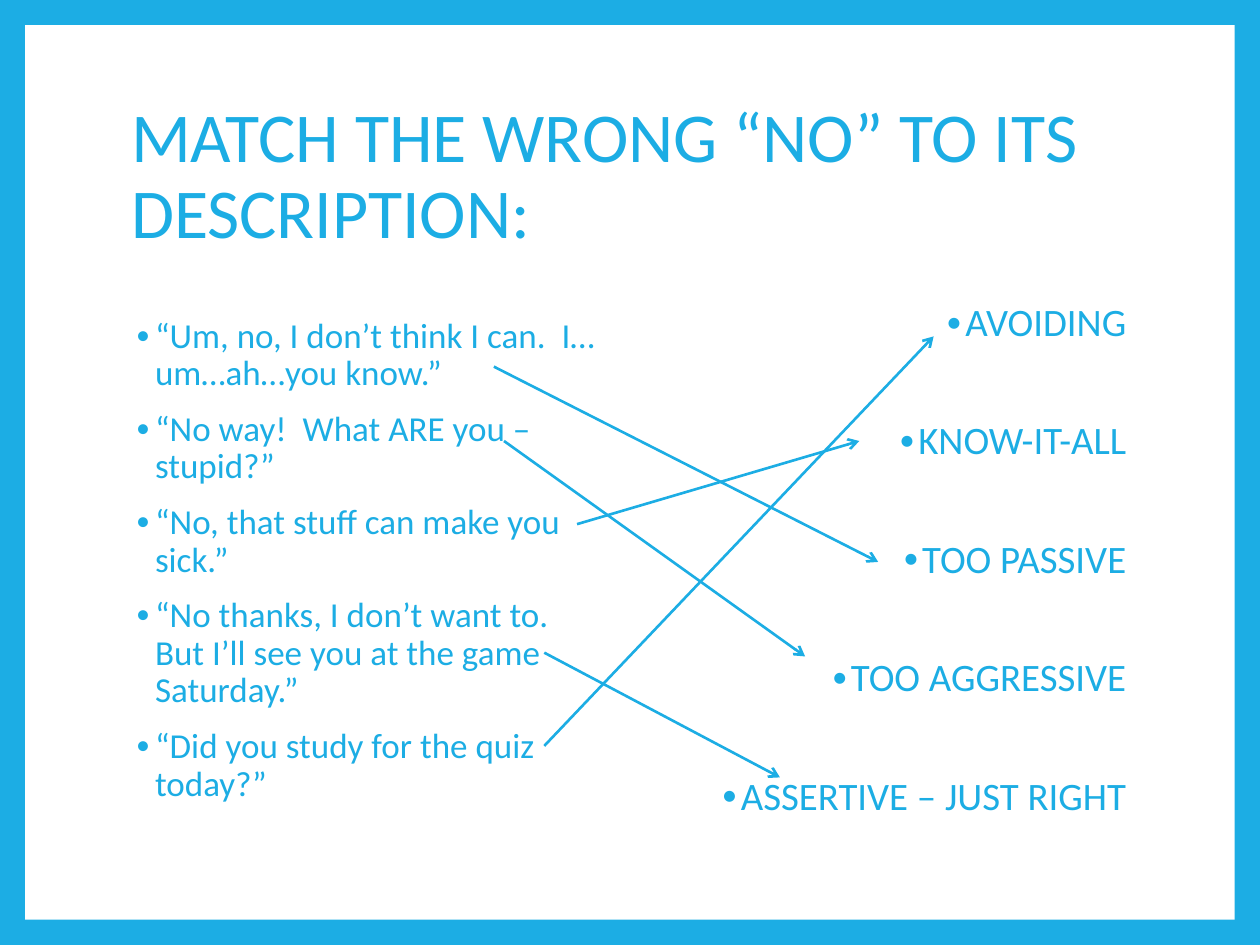
from dataclasses import dataclass

from lxml import etree
from pptx import Presentation
from pptx import util as u
from pptx.dml.color import RGBColor
from pptx.enum import shapes, text
from pptx.oxml import ns

QUOTES = [
    "“Um, no, I don’t think I can.  I…um…ah…you know.”",
    "“No way!  What ARE you – stupid?”",
    "“No, that stuff can make you sick.”",
    "“No thanks, I don’t want to.  But I’ll see you at the game Saturday.”",
    "“Did you study for the quiz today?”",
]
STYLES = ["AVOIDING", "KNOW-IT-ALL", "TOO PASSIVE", "TOO AGGRESSIVE",
          "ASSERTIVE – JUST RIGHT"]

# Matches from quote to style, in grid columns and rows
MATCHES = [
    ((39.2, 29.1), (69.7, 44.6)),
    ((40, 35), (63.9, 52.1)),
    ((45.8, 41.6), (68.2, 35)),
    ((43.2, 51.8), (61.9, 61.7)),
    ((43.2, 59.2), (74.1, 26.7)),
]


@dataclass(frozen=True)
class Theme:
    blue: str = "1CADE4"
    white: str = "FFFFFF"
    font: str = "Calibri"
    title: float = 40
    quote: float = 20
    label: float = 22.2
    line: float = 1.5
    lead: float = 0.9


class Deck:
    """Holds the theme and current slide; lengths are cells of a 100 by 75 grid."""
    COLS, ROWS = 100, 75

    def __init__(self, theme):
        self.theme = theme
        self.prs = Presentation()
        self.prs.slide_width, self.prs.slide_height = u.Inches(10), u.Inches(7.5)

    def start(self):
        self.slide = self.prs.slides.add_slide(self.prs.slide_layouts[3])
        self.paint(self.slide.background.fill, self.theme.blue)

    def paint(self, fill, color):
        fill.solid()
        fill.fore_color.rgb = RGBColor.from_string(color)

    def point(self, col, row):
        return (round(self.prs.slide_width * col / self.COLS),
                round(self.prs.slide_height * row / self.ROWS))

    def panel(self, margin):
        """White sheet behind everything, with an even margin."""
        box = self.slide.shapes.add_shape(
            shapes.MSO_SHAPE.RECTANGLE, *self.point(margin, margin),
            *self.point(self.COLS - 2 * margin, self.ROWS - 2 * margin))
        box.shadow.inherit = False
        self.paint(box.fill, self.theme.white)
        box.line.fill.background()
        self.slide.shapes.element.insert(2, box.element)

    def place(self, index, spot, size, words, points, align):
        """Move and fill a placeholder, then return its paragraphs."""
        hold = self.slide.placeholders[index]
        hold.left, hold.top = self.point(*spot)
        hold.width, hold.height = self.point(*size)
        frame = hold.text_frame
        frame.text = words
        frame.word_wrap = True
        frame.auto_size = text.MSO_AUTO_SIZE.NONE
        frame.vertical_anchor = text.MSO_ANCHOR.MIDDLE
        for para in frame.paragraphs:
            para.alignment = align
            para.line_spacing = self.theme.lead
            para.space_before = u.Pt(0)
            for run in para.runs:
                run.font.size = u.Pt(points)
                run.font.name = self.theme.font
                run.font.color.rgb = RGBColor.from_string(self.theme.blue)
        return frame.paragraphs

    def title(self, spot, size, words):
        self.place(0, spot, size, words, self.theme.title, text.PP_ALIGN.LEFT)

    def list(self, index, spot, size, items, points, gap,
             align=text.PP_ALIGN.LEFT):
        paras = self.place(index, spot, size, "\n".join(items), points, align)
        for num, para in enumerate(paras):
            if num:
                para.space_before = u.Pt(gap)
            self.bullet(para)

    def bullet(self, para):
        props = para._p.get_or_add_pPr()
        props.set("marL", str(u.Inches(0.19)))
        props.set("indent", str(u.Inches(-0.15)))
        tint = etree.SubElement(props, ns.qn("a:buClr"))
        etree.SubElement(tint, ns.qn("a:srgbClr"), val=self.theme.blue)
        etree.SubElement(props, ns.qn("a:buSzPct"), val="80000")
        etree.SubElement(props, ns.qn("a:buFont"), typeface=self.theme.font)
        etree.SubElement(props, ns.qn("a:buChar"), char="•")

    def arrow(self, start, end):
        link = self.slide.shapes.add_connector(
            shapes.MSO_CONNECTOR.STRAIGHT, *self.point(*start), *self.point(*end))
        link.line.width = u.Pt(self.theme.line)
        self.paint(link.line.fill, self.theme.blue)
        etree.SubElement(link.line._get_or_add_ln(), ns.qn("a:tailEnd"), type="arrow")
        etree.SubElement(link.element.spPr, ns.qn("a:effectLst"))


def main():
    theme = Theme()
    deck = Deck(theme)
    left, top, wide, gap = 9.4, 22.5, 81, 3
    half = (wide - gap) / 2
    deck.start()
    deck.panel(2)
    deck.title((left, 6.7), (wide, 14.8),
               "MATCH THE WRONG “NO” TO ITS DESCRIPTION:")
    deck.list(1, (left, top), (half, 44), QUOTES, theme.quote, 10)
    deck.list(2, (left + half + gap, top), (half, 44), STYLES, theme.label,
              43.7, text.PP_ALIGN.RIGHT)
    for start, end in MATCHES:
        deck.arrow(start, end)
    deck.prs.save("out.pptx")


if __name__ == "__main__":
    main()
